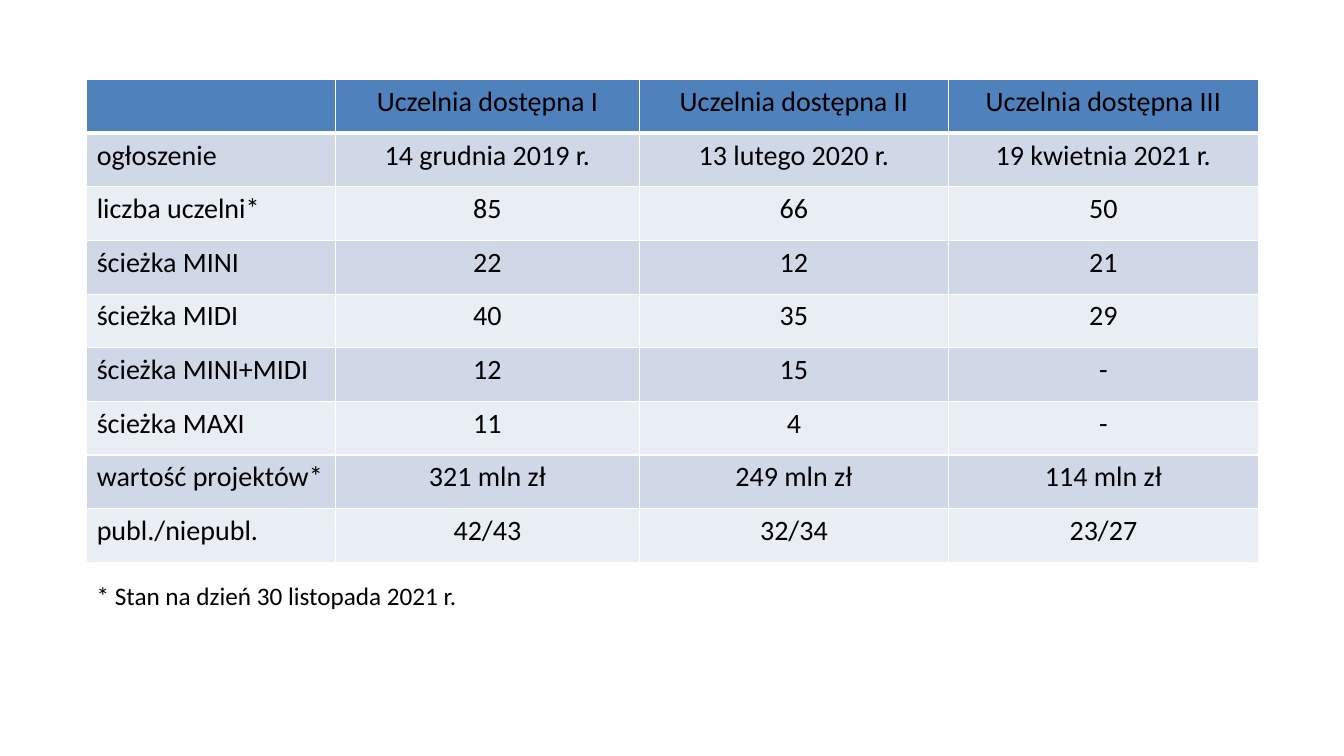
from lxml.etree import SubElement
from pptx import Presentation
from pptx.dml.color import RGBColor
from pptx.enum.text import MSO_AUTO_SIZE, PP_ALIGN
from pptx.oxml.ns import qn
from pptx.util import Inches, Pt

# Content
HEADER = ("", "Uczelnia dostępna I", "Uczelnia dostępna II", "Uczelnia dostępna III")
ROWS = [
    ("ogłoszenie", "14 grudnia 2019 r.", "13 lutego 2020 r.", "19 kwietnia 2021 r."),
    ("liczba uczelni*", "85", "66", "50"),
    ("ścieżka MINI", "22", "12", "21"),
    ("ścieżka MIDI", "40", "35", "29"),
    ("ścieżka MINI+MIDI", "12", "15", "-"),
    ("ścieżka MAXI", "11", "4", "-"),
    ("wartość projektów*", "321 mln zł", "249 mln zł", "114 mln zł"),
    ("publ./niepubl.", "42/43", "32/34", "23/27"),
]
FOOTNOTE = "* Stan na dzień 30 listopada 2021 r."

# Theme and geometry
THEME = {
    "font": "Calibri", "text": "000000", "border": "FFFFFF", "header": "4F81BD",
    "bands": ("D0D8E8", "E9EDF4"), "table_size": 20, "note_size": 18,
}
LEFT, TABLE_TOP, TABLE_HEIGHT = 0.86, 0.79, 4.79
COLUMN_WIDTHS = (2.47, 3.01, 3.07, 3.07)
NOTE_TOP, NOTE_WIDTH, NOTE_HEIGHT = 5.71, 6.67, 0.4


def write(para, text, size, align):
    para.alignment = align
    span = para.add_run() if text else para
    if text:
        span.text = text
    for name, value in {"name": THEME["font"], "size": Pt(size)}.items():
        setattr(span.font, name, value)
    span.font.color.rgb = RGBColor.from_string(THEME["text"])


def add_borders(cell, bottom):
    properties = cell._tc.get_or_add_tcPr()
    for side, width in {"L": 1, "R": 1, "T": 1, "B": bottom}.items():
        line = SubElement(properties, qn(f"a:ln{side}"), w=str(Pt(width)))
        fill = SubElement(line, qn("a:solidFill"))
        SubElement(fill, qn("a:srgbClr"), val=THEME["border"])


def add_calls_table(page):
    lines = [HEADER, *ROWS]
    frame = page.shapes.add_table(
        len(lines), len(HEADER), Inches(LEFT), Inches(TABLE_TOP),
        Inches(sum(COLUMN_WIDTHS)), Inches(TABLE_HEIGHT))
    table = frame.table
    for column, width in zip(table.columns, COLUMN_WIDTHS):
        column.width = Inches(width)
    for row_index, line in enumerate(lines):
        is_header = row_index == 0
        color = THEME["header"] if is_header else THEME["bands"][(row_index - 1) % 2]
        for column_index, text in enumerate(line):
            cell = table.cell(row_index, column_index)
            add_borders(cell, bottom=3 if is_header else 1)
            cell.fill.solid()
            cell.fill.fore_color.rgb = RGBColor.from_string(color)
            align = PP_ALIGN.CENTER if column_index else PP_ALIGN.LEFT
            write(cell.text_frame.paragraphs[0], text, THEME["table_size"], align)


def add_footnote(page):
    box = page.shapes.add_textbox(
        Inches(LEFT), Inches(NOTE_TOP), Inches(NOTE_WIDTH), Inches(NOTE_HEIGHT))
    box.text_frame.word_wrap = True
    box.text_frame.auto_size = MSO_AUTO_SIZE.SHAPE_TO_FIT_TEXT
    write(box.text_frame.paragraphs[0], FOOTNOTE, THEME["note_size"], PP_ALIGN.LEFT)


def main():
    deck = Presentation()
    deck.slide_width, deck.slide_height = Inches(13.33), Inches(7.5)
    page = deck.slides.add_slide(deck.slide_layouts[6])
    add_calls_table(page)
    add_footnote(page)
    deck.save("out.pptx")


if __name__ == "__main__":
    main()
